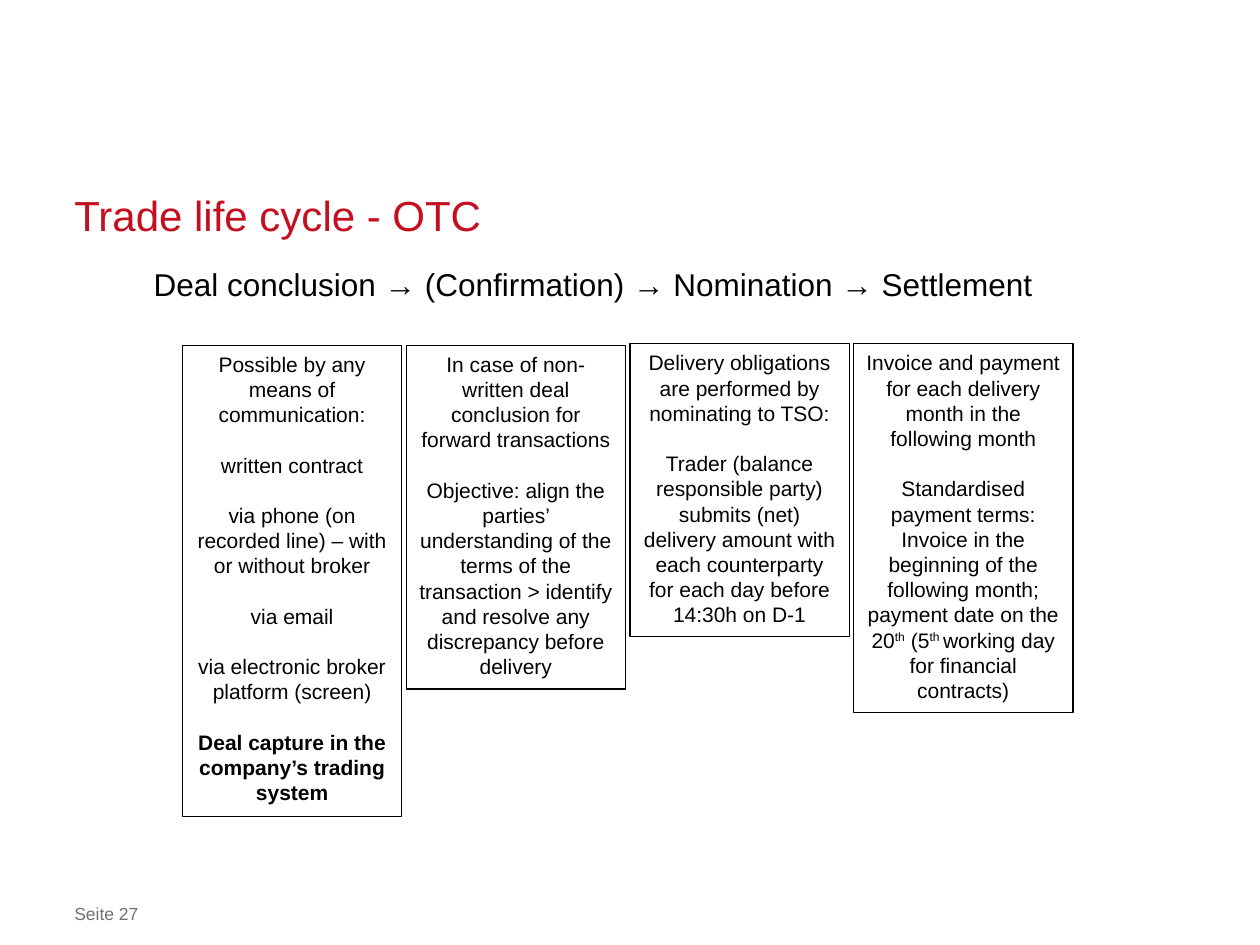
from pptx import Presentation
from pptx.dml.color import RGBColor
from pptx.enum.shapes import MSO_SHAPE
from pptx.enum.text import MSO_ANCHOR, PP_ALIGN
from pptx.util import Cm, Pt

COLORS = {"red": "C50E1F", "black": "000000", "grey": "717171"}
LINE = Pt(14.4)

# Each step: top and height in cm, then groups of paragraphs set apart by a gap.
# Text between carets is raised.
STEPS = [
    (6.96, 9.5, [
        ["Possible by any means of communication:"],
        ["written contract"],
        ["via phone (on recorded line) – with or without broker"],
        ["via email"],
        ["via electronic broker platform (screen)"],
        ["Deal capture in the company’s trading system"],
    ]),
    (6.96, 6.93, [
        ["In case of non-written deal conclusion for forward transactions"],
        ["Objective: align the parties’ understanding of the terms of the "
         "transaction > identify and resolve any discrepancy before delivery"],
    ]),
    (6.93, 5.9, [
        ["Delivery obligations are performed by nominating to TSO:"],
        ["Trader (balance responsible party) submits (net) delivery amount "
         "with each counterparty for each day before 14:30h on D-1"],
    ]),
    (6.93, 7.44, [
        ["Invoice and payment for each delivery month in the following month"],
        ["Standardised payment terms:",
         "Invoice in the beginning of the following month; payment date on "
         "the 20^th^ (5^th ^working day for financial contracts)"],
    ]),
]


def style(font, size, color):
    font.name = "Arial"
    font.size = Pt(size)
    font.color.rgb = RGBColor.from_string(COLORS[color])


def add_label(slide, box, text, size, color, pitch=None, anchor=MSO_ANCHOR.TOP):
    """Place one line of text without margins in the box."""
    frame = slide.shapes.add_textbox(*map(Cm, box)).text_frame
    frame.word_wrap = True
    frame.vertical_anchor = anchor
    frame.margin_left = frame.margin_right = 0
    frame.margin_top = frame.margin_bottom = 0
    frame.text = text
    para = frame.paragraphs[0]
    if pitch:
        para.line_spacing = Pt(pitch)
    style(para.runs[0].font, size, color)


def fill_para(para, text):
    """Write centred text, raising the parts between carets."""
    para.alignment = PP_ALIGN.CENTER
    para.line_spacing = LINE
    for i, part in enumerate(text.split("^")):
        run = para.add_run()
        run.text = part
        style(run.font, 12, "black")
        if i % 2:
            run.font._element.set("baseline", "30000")


def add_step(slide, box, groups):
    """Draw one framed step with its groups of text."""
    shape = slide.shapes.add_shape(MSO_SHAPE.RECTANGLE, *map(Cm, box))
    shape.shadow.inherit = False
    shape.fill.background()
    shape.line.color.rgb = RGBColor.from_string(COLORS["black"])
    shape.line.width = Pt(0.75)
    frame = shape.text_frame
    frame.word_wrap = True
    frame.vertical_anchor = MSO_ANCHOR.TOP
    for g, group in enumerate(groups):
        for t, text in enumerate(group):
            first = g == 0 and t == 0
            para = frame.paragraphs[0] if first else frame.add_paragraph()
            if g and t == 0:
                para.space_before = LINE
            fill_para(para, text)
    return frame


def add_steps(slide, left, width, pitch):
    """Set the steps side by side at an equal pitch."""
    frames = [add_step(slide, (left + i * pitch, top, width, height), groups)
              for i, (top, height, groups) in enumerate(STEPS)]
    # The closing note of the first step is bold
    frames[0].paragraphs[-1].runs[0].font.bold = True


def main():
    deck = Presentation()
    deck.slide_width, deck.slide_height = Cm(25.4), Cm(19.05)
    slide = deck.slides.add_slide(deck.slide_layouts[6])

    # Title, chain of steps and page number
    add_label(slide, (1.5, 3.84, 22.4, 0.99), "Trade life cycle - OTC",
              24, "red", 30, MSO_ANCHOR.BOTTOM)
    add_label(slide, (3.1, 5.33, 18.8, 11.3),
              "Deal conclusion → (Confirmation) → Nomination → Settlement",
              18, "black", 22)
    add_label(slide, (1.5, 18.21, 18.39, 0.43), "Seite 27", 10, "grey")

    # Details of each step
    add_steps(slide, left=3.68, width=4.42, pitch=4.51)

    deck.save("out.pptx")


if __name__ == "__main__":
    main()
